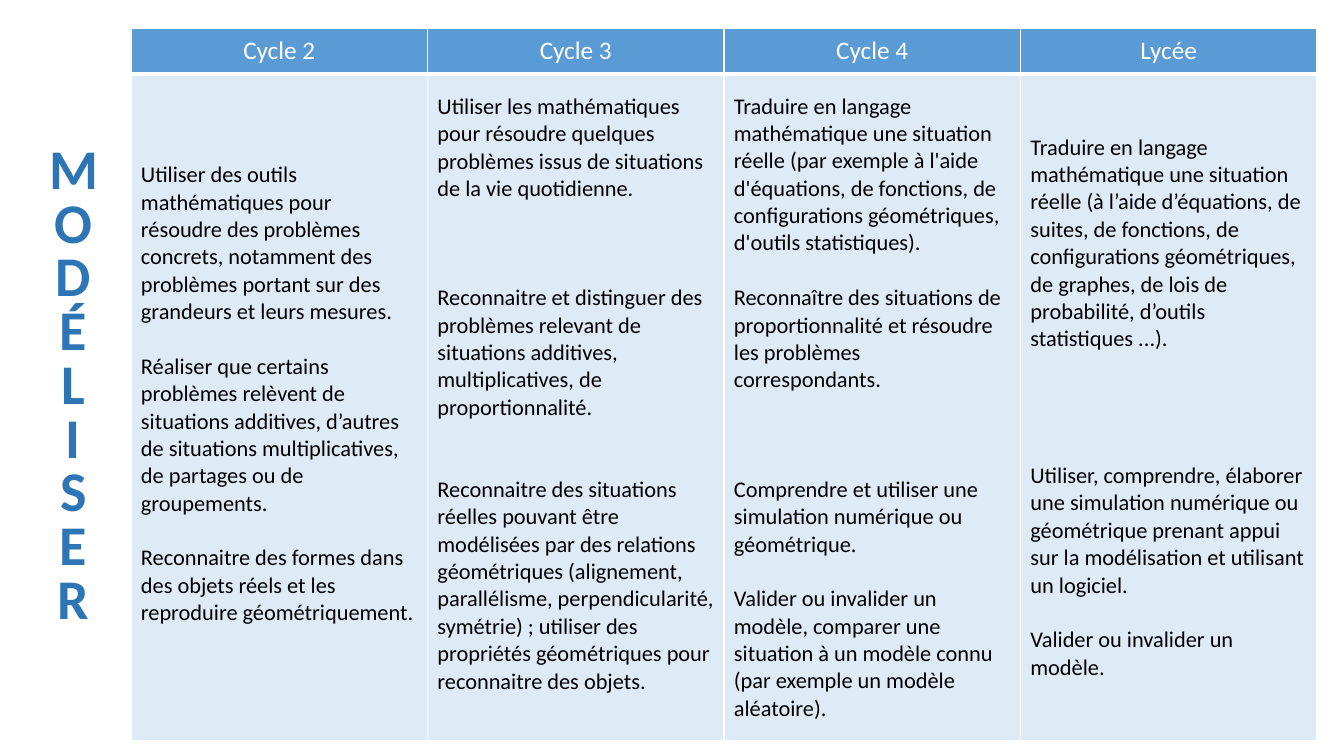
from lxml import etree
from pptx import Presentation
from pptx.dml.color import RGBColor
from pptx.enum.text import MSO_ANCHOR, PP_ALIGN
from pptx.oxml.ns import qn
from pptx.util import Emu, Pt

EMU_PER_PX = 914400 / 100.8
FONT = "Calibri"
BODY_SIZE = 16
BODY_LINE = 19.53  # height in points of one line of body text
BODY_LINE_PX = 27

COLORS = {
    "header": "5B9BD5",
    "body": "DEEBF7",
    "border": "FFFFFF",
    "white": "FFFFFF",
    "text": "000000",
    "title": "2E75B6",
}

TITLE = "MODÉLISER"

# Each column: heading, lines left free at the bottom,
# then paragraphs as (lines left free above, text).
COLUMNS = [
    ("Cycle 2", 1, [
        (0, "Utiliser des outils mathématiques pour résoudre des problèmes concrets, "
            "notamment des problèmes portant sur des grandeurs et leurs mesures."),
        (1, "Réaliser que certains problèmes relèvent de situations additives, "
            "d’autres de situations multiplicatives, de partages ou de groupements."),
        (1, "Reconnaitre des formes dans des objets réels et les reproduire "
            "géométriquement."),
    ]),
    ("Cycle 3", 1, [
        (0, "Utiliser les mathématiques pour résoudre quelques problèmes issus de "
            "situations de la vie quotidienne."),
        (3, "Reconnaitre et distinguer des problèmes relevant de situations "
            "additives, multiplicatives, de proportionnalité."),
        (2, "Reconnaitre des situations réelles pouvant être modélisées par des "
            "relations géométriques (alignement, parallélisme, perpendicularité, "
            "symétrie) ; utiliser des propriétés géométriques pour reconnaitre "
            "des objets."),
    ]),
    ("Cycle 4", 0, [
        (0, "Traduire en langage mathématique une situation réelle (par exemple à "
            "l'aide d'équations, de fonctions, de configurations géométriques, "
            "d'outils statistiques)."),
        (1, "Reconnaître des situations de proportionnalité et résoudre les "
            "problèmes correspondants."),
        (3, "Comprendre et utiliser une simulation numérique ou géométrique."),
        (1, "Valider ou invalider un modèle, comparer une situation à un modèle "
            "connu (par exemple un modèle aléatoire)."),
    ]),
    ("Lycée", 0, [
        (0, "Traduire en langage mathématique une situation réelle (à l’aide "
            "d’équations, de suites, de fonctions, de configurations géométriques, "
            "de graphes, de lois de probabilité, d’outils"),
        (0, "statistiques ...)."),
        (4, "Utiliser, comprendre, élaborer une simulation numérique ou géométrique "
            "prenant appui sur la modélisation et utilisant un logiciel."),
        (1, "Valider ou invalider un modèle."),
    ]),
]


def px(n):
    return Emu(round(n * EMU_PER_PX))


def rgb(name):
    return RGBColor.from_string(COLORS[name])


def write(tf, paragraphs, size=BODY_SIZE, color="text", bold=False,
          align=PP_ALIGN.LEFT, spacing=None):
    """Fill a text frame with (free lines above, text) paragraphs."""
    for i, (gap, text) in enumerate(paragraphs):
        p = tf.paragraphs[0] if i == 0 else tf.add_paragraph()
        p.alignment = align
        p.space_before = Pt(gap * BODY_LINE)
        if spacing:
            p.line_spacing = spacing
        r = p.add_run()
        r.text = text
        r.font.name = FONT
        r.font.size = Pt(size)
        r.font.bold = bold
        r.font.color.rgb = rgb(color)


def add_borders(cell, bottom=1):
    """Draw 1 pt borders, with a chosen bottom width in points."""
    tc_pr = cell._tc.get_or_add_tcPr()
    for side, width in zip("LRTB", (1, 1, 1, bottom)):
        ln = etree.SubElement(tc_pr, qn(f"a:ln{side}"), w=str(Pt(width)))
        fill = etree.SubElement(ln, qn("a:solidFill"))
        etree.SubElement(fill, qn("a:srgbClr"), val=COLORS["border"])


def style_cell(cell, fill, bottom_border=1, free_lines=0):
    add_borders(cell, bottom_border)
    cell.fill.solid()
    cell.fill.fore_color.rgb = rgb(fill)
    cell.vertical_anchor = MSO_ANCHOR.MIDDLE
    cell.margin_left = cell.margin_right = px(10)
    cell.margin_top = px(5)
    cell.margin_bottom = px(5 + free_lines * BODY_LINE_PX)


def add_skills_table(s):
    header_h, body_h, width = 46, 667, 1186
    table = s.shapes.add_table(2, len(COLUMNS), px(131), px(28), px(width),
                               px(header_h + body_h)).table
    table.horz_banding = False
    table.rows[0].height = px(header_h)
    table.rows[1].height = px(body_h)
    for i, (heading, free_lines, paragraphs) in enumerate(COLUMNS):
        table.columns[i].width = px(width / len(COLUMNS))
        head, body = table.cell(0, i), table.cell(1, i)
        style_cell(head, "header", bottom_border=3)
        write(head.text_frame, [(0, heading)], size=18, color="white",
              align=PP_ALIGN.CENTER)
        style_cell(body, "body", free_lines=free_lines)
        write(body.text_frame, paragraphs)


def add_vertical_title(s):
    tf = s.shapes.add_textbox(px(16), px(135), px(115), px(500)).text_frame
    tf.word_wrap = True
    tf.vertical_anchor = MSO_ANCHOR.BOTTOM
    write(tf, [(0, letter) for letter in TITLE], size=40, color="title",
          bold=True, align=PP_ALIGN.CENTER, spacing=0.8)


def main():
    prs = Presentation()
    prs.slide_width, prs.slide_height = px(1344), px(756)
    s = prs.slides.add_slide(prs.slide_layouts[6])
    add_skills_table(s)
    add_vertical_title(s)
    prs.save("out.pptx")


if __name__ == "__main__":
    main()
